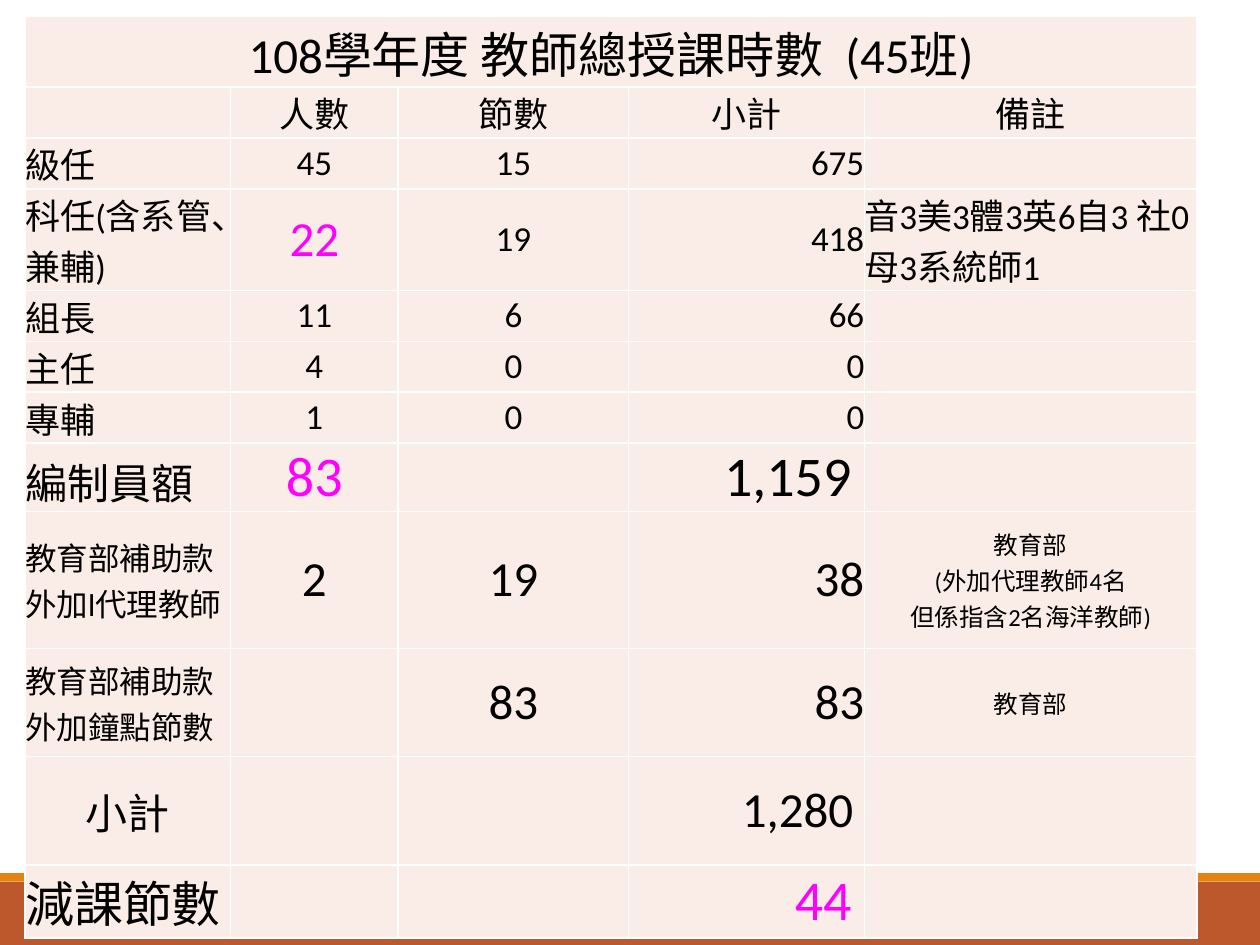
from pptx import Presentation
from pptx.dml.color import RGBColor
from pptx.enum.shapes import MSO_SHAPE
from pptx.enum.text import MSO_ANCHOR, PP_ALIGN
from pptx.oxml import parse_xml
from pptx.oxml.ns import nsdecls
from pptx.util import Inches, Pt

HUES = {"rust": "BD582C", "gold": "E48312", "cell": "FAEDE7",
        "edge": "FFFFFF", "ink": "000000", "pink": "FF00FF"}
FONT = "Calibri"
WIDE, HIGH = Inches(10), Inches(7.5)
COLS = [1.63, 1.33, 1.83, 1.87, 2.64]
LEFT, MID, RIGHT = PP_ALIGN.LEFT, PP_ALIGN.CENTER, PP_ALIGN.RIGHT
SIDES = [LEFT, MID, MID, RIGHT, MID]

# height, sizes of label, numbers and note, texts
ROWS = [
    (0.47, (28, 28, 28), ["108學年度 教師總授課時數  (45班)", "", "", "", ""]),
    (0.33, (20, 20, 20), ["", "人數", "節數", "小計", "備註"]),
    (0.33, (20, 20, 20), ["級任", "45", "15", "675", ""]),
    (0.67, (20, 20, 20), ["科任(含系管、兼輔)", "22", "19", "418",
                          "音3美3體3英6自3 社0母3系統師1"]),
    (0.33, (20, 20, 20), ["組長", "11", "6", "66", ""]),
    (0.33, (20, 20, 20), ["主任", "4", "0", "0", ""]),
    (0.33, (20, 20, 20), ["專輔", "1", "0", "0", ""]),
    (0.53, (24, 32, 14), ["編制員額", "83", "", "1,159 ", ""]),
    (0.73, (18, 28, 14), ["教育部補助款\v外加l代理教師", "2", "19", "38",
                          "教育部\v(外加代理教師4名\v但係指含2名海洋教師)"]),
    (0.86, (18, 28, 14), ["教育部補助款\v外加鐘點節數", "", "83", "83", "教育部"]),
    (0.86, (24, 28, 14), ["小計", "", "", "1,280 ", ""]),
    (0.58, (28, 32, 14), ["減課節數", "", "", "44 ", ""]),
]
HEAD, STAFF, QUOTA, SUM, CUT = 1, 3, 7, 10, 11
ALIGN = {(0, 0): MID, (HEAD, 3): MID, (STAFF, 4): LEFT, (SUM, 0): MID}
PINK = {(STAFF, 1), (QUOTA, 1), (CUT, 3)}
LARGE = {(STAFF, 1): 28}


def hue(name):
    return RGBColor.from_string(HUES[name])


def add_bar(slide, box, name):
    bar = slide.shapes.add_shape(MSO_SHAPE.RECTANGLE, *box)
    bar.shadow.inherit = False
    bar.fill.solid()
    bar.fill.fore_color.rgb = hue(name)
    bar.line.fill.background()


def add_foot(slide, left, top, width, height):
    strip = int(height * 0.12)
    add_bar(slide, (left, top + strip, width, height - strip), "rust")
    add_bar(slide, (left, top, width, strip), "gold")


def add_edges(cell):
    props = cell._tc.get_or_add_tcPr()
    for side in ("lnL", "lnR", "lnT", "lnB"):
        props.append(parse_xml(
            f'<a:{side} {nsdecls("a")} w="{Pt(1)}"><a:solidFill>'
            f'<a:srgbClr val="{HUES["edge"]}"/></a:solidFill></a:{side}>'))


def fill_cell(cell, row, col, text, size):
    add_edges(cell)
    cell.fill.solid()
    cell.fill.fore_color.rgb = hue("cell")
    cell.margin_left = cell.margin_right = 0
    cell.margin_top = cell.margin_bottom = 0
    if not text:
        return
    low = row <= HEAD or (col == 0 and row <= QUOTA) or (row, col) == (STAFF, 4)
    cell.vertical_anchor = MSO_ANCHOR.BOTTOM if low else MSO_ANCHOR.MIDDLE
    cell.text_frame.text = text
    para = cell.text_frame.paragraphs[0]
    para.alignment = ALIGN.get((row, col), SIDES[col])
    for run in para.runs:
        run.font.name = FONT
        run.font.size = Pt(LARGE.get((row, col), size))
        run.font.color.rgb = hue("pink" if (row, col) in PINK else "ink")


def add_hours(slide, left, top, width, height):
    table = slide.shapes.add_table(
        len(ROWS), len(COLS), left, top, width, height).table
    table.first_row = table.horz_banding = False
    for col, share in zip(table.columns, COLS):
        col.width = int(width * share / sum(COLS))
    total = sum(tall for tall, _, _ in ROWS)
    for row, (tall, sizes, texts) in enumerate(ROWS):
        table.rows[row].height = int(height * tall / total)
        label, number, note = sizes
        spread = [label, number, number, number, note]
        for col, (text, size) in enumerate(zip(texts, spread)):
            fill_cell(table.cell(row, col), row, col, text, size)
    table.cell(0, 0).merge(table.cell(0, len(COLS) - 1))


def main():
    deck = Presentation()
    deck.slide_width, deck.slide_height = WIDE, HIGH
    slide = deck.slides.add_slide(deck.slide_layouts[6])
    add_foot(slide, 0, int(HIGH * 0.924), WIDE, int(HIGH * 0.076))
    add_hours(slide, int(WIDE * 0.02), int(HIGH * 0.0173),
              int(WIDE * 0.93), int(HIGH * 0.8467))
    deck.save("out.pptx")


if __name__ == "__main__":
    main()
